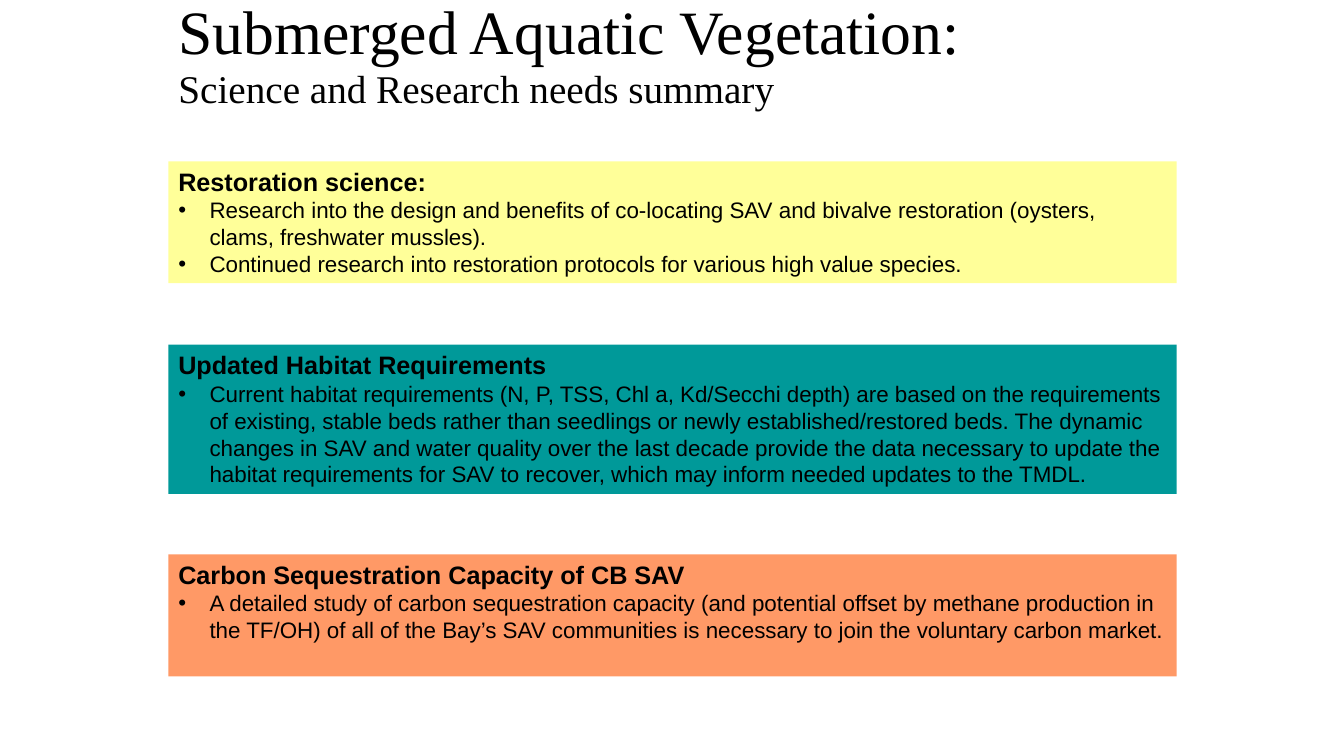
import pptx
import pptx.dml.color
import pptx.enum.shapes
import pptx.enum.text
import pptx.oxml
import pptx.util
from pptx.util import Inches, Pt

COLORS = {
    "text": "000000",
    "restoration": "FFFF99",
    "habitat": "009999",
    "carbon": "FF9966",
}
LEFT = Inches(1.67)
BULLET_INDENT = Inches(0.31)


def rgb(name):
    return pptx.dml.color.RGBColor.from_string(COLORS[name])


def add_run(paragraph, text, font_name, size, bold=False):
    run = paragraph.add_run()
    run.text = text
    run.font.name = font_name
    run.font.size = Pt(size)
    run.font.bold = bold
    run.font.color.rgb = rgb("text")


deck = pptx.Presentation()
deck.slide_width = Inches(13.33)
deck.slide_height = Inches(7.5)
slide = deck.slides.add_slide(deck.slide_layouts[0])

# Heading and subheading
headings = [
    (slide.shapes.title, "Submerged Aquatic Vegetation:", 44, 0.01, 8.5, 0.58,
     pptx.enum.text.MSO_ANCHOR.MIDDLE),
    (slide.placeholders[1], "Science and Research needs summary", 28, 0.59, 7, 0.67,
     pptx.enum.text.MSO_ANCHOR.TOP),
]
for heading, text, size, top, width, height, anchor in headings:
    heading.left, heading.top = LEFT, Inches(top)
    heading.width, heading.height = Inches(width), Inches(height)
    frame = heading.text_frame
    frame.auto_size = pptx.enum.text.MSO_AUTO_SIZE.NONE
    frame.vertical_anchor = anchor
    frame.paragraphs[0].alignment = pptx.enum.text.PP_ALIGN.LEFT
    add_run(frame.paragraphs[0], text, "Times New Roman", size)

# One coloured panel per research need
needs = [
    ("restoration", 1.6, 1.21, "Restoration science:", [
        "Research into the design and benefits of co-locating SAV and bivalve "
        "restoration (oysters, clams, freshwater mussles).",
        "Continued research into restoration protocols for various high value species.",
    ]),
    ("habitat", 3.42, 1.48, "Updated Habitat Requirements", [
        "Current habitat requirements (N, P, TSS, Chl a, Kd/Secchi depth) are based on "
        "the requirements of existing, stable beds rather than seedlings or newly "
        "established/restored beds. The dynamic changes in SAV and water quality over "
        "the last decade provide the data necessary to update the habitat requirements "
        "for SAV to recover, which may inform needed updates to the TMDL.",
    ]),
    ("carbon", 5.5, 1.21, "Carbon Sequestration Capacity of CB SAV", [
        "A detailed study of carbon sequestration capacity (and potential offset by "
        "methane production in the TF/OH) of all of the Bay’s SAV communities is "
        "necessary to join the voluntary carbon market.",
    ]),
]
for color, top, height, need, details in needs:
    panel = slide.shapes.add_shape(
        pptx.enum.shapes.MSO_SHAPE.RECTANGLE,
        LEFT, Inches(top), Inches(10), Inches(height))
    panel.shadow.inherit = False
    panel.fill.solid()
    panel.fill.fore_color.rgb = rgb(color)
    panel.line.fill.background()

    frame = panel.text_frame
    frame.word_wrap = True
    frame.vertical_anchor = pptx.enum.text.MSO_ANCHOR.TOP
    frame.paragraphs[0].alignment = pptx.enum.text.PP_ALIGN.LEFT
    add_run(frame.paragraphs[0], need, "Arial", 18, bold=True)

    for detail in details:
        bullet = frame.add_paragraph()
        bullet.alignment = pptx.enum.text.PP_ALIGN.LEFT
        add_run(bullet, detail, "Arial", 16)
        properties = bullet._p.get_or_add_pPr()
        properties.set("marL", str(BULLET_INDENT))
        properties.set("indent", str(-BULLET_INDENT))
        for tag, attribute, value in [("buFont", "typeface", "Arial"),
                                      ("buChar", "char", "•")]:
            mark = properties.makeelement(pptx.oxml.ns.qn(f"a:{tag}"), {attribute: value})
            properties.append(mark)

deck.save("out.pptx")
